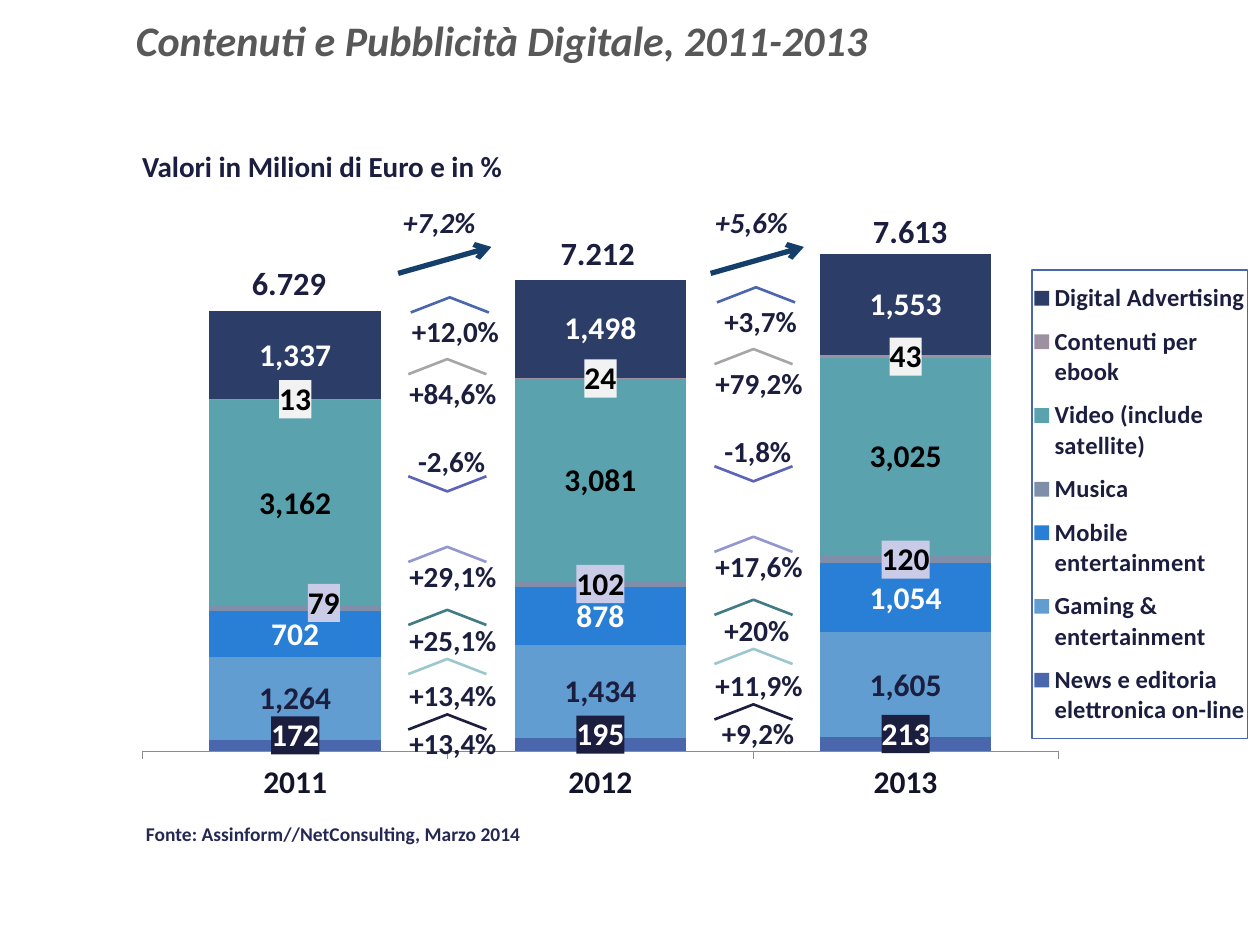
from copy import deepcopy
from typing import NamedTuple

from pptx import Presentation
from pptx.chart.data import CategoryChartData
from pptx.dml.color import RGBColor
from pptx.enum.chart import XL_CHART_TYPE as ChartType
from pptx.enum.chart import XL_LEGEND_POSITION as LegendPosition
from pptx.enum.chart import XL_TICK_MARK as TickMark
from pptx.enum.chart import XL_TICK_LABEL_POSITION as TickLabels
from pptx.enum.shapes import MSO_CONNECTOR as Connector
from pptx.enum.shapes import MSO_SHAPE as Shape
from pptx.enum.text import MSO_ANCHOR as Anchor
from pptx.enum.text import PP_ALIGN as Align
from pptx.oxml import parse_xml
from pptx.oxml.ns import nsdecls, qn
from pptx.oxml.xmlchemy import OxmlElement
from pptx.util import Inches, Pt

FONT = "Calibri"
NAVY = "1B1E3E"
ACCENT = "4A66AC"
SHIFT_X, SHIFT_Y = 2.43, -0.08


class Series(NamedTuple):
    name: str
    values: tuple
    color: str
    label_color: str
    label_fill: str = ""
    label_shifts: dict = {}


class Growth(NamedTuple):
    color: str
    tip: float
    label_top: float
    first: tuple
    second: tuple
    left: float = 3.24
    rise: float = 0.12


class Caption(NamedTuple):
    text: str
    left: float
    top: float
    width: float
    size: float = 16.6
    italic: bool = False


SERIES = [
    Series("News e editoria elettronica on-line", (172, 195, 213), ACCENT, "FFFFFF", NAVY,
           {index: (0, -0.017) for index in range(3)}),
    Series("Gaming & entertainment", (1264, 1434, 1605), "629DD1", NAVY),
    Series("Mobile entertainment", (702, 878, 1054), "297FD5", "FFFFFF"),
    Series("Musica", (79, 102, 120), "7F8FA9", "000000", "C9CBE7", {0: (0.024, -0.01)}),
    Series("Video (include satellite)", (3162, 3081, 3025), "5AA2AE", "000000"),
    Series("Contenuti per ebook", (13, 24, 43), "9D90A0", "000000", "F2F2F2"),
    Series("Digital Advertising", (1337, 1498, 1553), "2C3D67", "FFFFFF"),
]

GROWTHS = [
    Growth(ACCENT, 2.36, 2.44, ("+12,0%", 3.17, 1.02), ("+3,7%", 5.65, 0.89), left=3.26),
    Growth("A6A6A6", 2.85, 2.93, ("+84,6%", 3.15, 1.02), ("+79,2%", 5.58, 1.02)),
    Growth("5C64B7", 3.9, 3.47, ("-2,6%", 3.22, 0.81), ("-1,8%", 5.65, 0.81), rise=-0.12),
    Growth("9297CF", 4.34, 4.38, ("+29,1%", 3.15, 1.02), ("+17,6%", 5.58, 1.02)),
    Growth("417B85", 4.84, 4.89, ("+25,1%", 3.15, 1.02), ("+20%", 5.65, 0.83)),
    Growth("9CC7CE", 5.23, 5.33, ("+13,4%", 3.15, 1.02), ("+11,9%", 5.58, 1.02)),
    Growth(NAVY, 5.67, 5.71, ("+13,4%", 3.15, 1.02), ("+9,2%", 5.63, 0.89)),
]

CAPTIONS = [
    Caption("Valori in Milioni di Euro e in %", 1.03, 1.13, 3.22),
    Caption("6.729", 1.9, 2.04, 0.82, 18.5),
    Caption("7.212", 4.35, 1.8, 0.82, 18.5),
    Caption("7.613", 6.83, 1.63, 0.82, 18.5),
    Caption("+7,2%", 3.1, 1.57, 0.88, italic=True),
    Caption("+5,6%", 5.58, 1.57, 0.88, italic=True),
]


def rgb(value: str) -> RGBColor:
    return RGBColor.from_string(value)


def style_font(font, size: float, color: str, italic: bool = False) -> None:
    font.name, font.size, font.bold, font.italic = FONT, Pt(size), True, italic
    font.color.rgb = rgb(color)


def write(shape, text: str, size: float, color: str, italic: bool = False) -> None:
    frame = shape.text_frame
    frame.text = text
    frame.word_wrap = False
    para = frame.paragraphs[0]
    para.alignment = Align.LEFT
    style_font(para.runs[0].font, size, color, italic)


def add_caption(page, item: Caption) -> None:
    height = 0.41 if item.size > 18 else 0.38
    box = page.shapes.add_textbox(Inches(item.left), Inches(item.top), Inches(item.width), Inches(height))
    write(box, item.text, item.size, NAVY, item.italic)


def add_chevron(page, left: float, tip: float, rise: float, color: str) -> None:
    base = Inches(tip + rise)
    builder = page.shapes.build_freeform(Inches(left), base)
    builder.add_line_segments([(Inches(left + 0.31), Inches(tip)), (Inches(left + 0.62), base)], close=False)
    chevron = builder.convert_to_shape()
    chevron.shadow.inherit = False
    chevron.fill.background()
    chevron.line.color.rgb = rgb(color)
    chevron.line.width = Pt(1.5)


def add_growth(page, item: Growth) -> None:
    for column, (text, left, width) in enumerate((item.first, item.second)):
        drop = column * SHIFT_Y
        add_caption(page, Caption(text, left, item.label_top + drop, width))
        add_chevron(page, item.left + column * SHIFT_X, item.tip + drop, item.rise, item.color)


def add_trend_arrow(page, left: float) -> None:
    arrow = page.shapes.add_connector(
        Connector.STRAIGHT, Inches(left), Inches(2.17), Inches(left + 0.74), Inches(1.96))
    arrow.line.color.rgb = rgb("143F6A")
    arrow.line.width = Pt(3)
    tail = OxmlElement("a:tailEnd")
    tail.set("type", "arrow")
    arrow.line._get_or_add_ln().append(tail)
    arrow._element.spPr.append(OxmlElement("a:effectLst"))


def make_layout(**values):
    fields = "".join(f'<c:{name} val="{value}"/>' for name, value in values.items())
    return parse_xml(f'<c:layout {nsdecls("c")}><c:manualLayout>{fields}</c:manualLayout></c:layout>')


def make_label_fill(color: str):
    return parse_xml(f'<c:spPr {nsdecls("c", "a")}><a:solidFill><a:srgbClr val="{color}"/></a:solidFill></c:spPr>')


def drop_children(parent, tag: str) -> None:
    for child in parent.findall(qn(tag)):
        parent.remove(child)


def style_series(series, item: Series) -> None:
    series.format.fill.solid()
    series.format.fill.fore_color.rgb = rgb(item.color)
    labels = series.data_labels
    labels.show_value = True
    labels.number_format, labels.number_format_is_linked = "#,##0", False
    style_font(labels.font, 18, item.label_color)
    element = labels._element
    drop_children(element, "c:showLeaderLines")
    if item.label_fill:
        element.find(qn("c:txPr")).addprevious(make_label_fill(item.label_fill))
    shared = list(element)
    for position, (index, (x, y)) in enumerate(item.label_shifts.items()):
        label = OxmlElement("c:dLbl")
        number = OxmlElement("c:idx")
        number.set("val", str(index))
        label.extend([number, make_layout(x=x, y=y), *deepcopy(shared)])
        element.insert(position, label)


def style_legend(chart) -> None:
    chart.has_legend = True
    chart.legend.position = LegendPosition.RIGHT
    chart.legend.include_in_layout = False
    style_font(chart.legend.font, 14, NAVY)
    element = chart.legend._element
    drop_children(element, "c:layout")
    element.find(qn("c:legendPos")).addnext(
        make_layout(xMode="edge", yMode="edge", x=0.762, y=0.099, w=0.181, h=0.78))
    element.find(qn("c:txPr")).addprevious(parse_xml(
        f'<c:spPr {nsdecls("c", "a")}><a:ln w="9525"><a:solidFill>'
        f'<a:srgbClr val="{ACCENT}"/></a:solidFill></a:ln></c:spPr>'))


def add_revenue_chart(page) -> None:
    data = CategoryChartData(number_format="#,##0")
    data.categories = ["2011", "2012", "2013"]
    for item in SERIES:
        data.add_series(item.name, item.values)
    chart = page.shapes.add_chart(
        ChartType.COLUMN_STACKED, Inches(0.99), Inches(1.67), Inches(9.45), Inches(4.77), data).chart
    chart.has_title = False
    style_font(chart.font, 18, "000000")
    plot = chart.plots[0]
    plot.gap_width, plot.overlap, plot.vary_by_categories = 78, 100, False
    for series, item in zip(plot.series, SERIES):
        style_series(series, item)
    years, amounts = chart.category_axis, chart.value_axis
    years.major_tick_mark = TickMark.OUTSIDE
    years.tick_label_position = TickLabels.LOW
    style_font(years.tick_labels.font, 18, "121429")
    years.format.line.color.rgb = rgb("8C8C8C")
    years.format.line.width = Pt(0.5)
    amounts.minimum_scale, amounts.maximum_scale = 0, 8000
    amounts.has_major_gridlines = amounts.visible = False
    area = chart.element.find(".//" + qn("c:plotArea"))
    drop_children(area, "c:layout")
    area.insert(0, make_layout(layoutTarget="inner", xMode="edge", yMode="edge", x=0.015, y=0.03, w=0.769, h=0.87))
    style_legend(chart)


def main() -> None:
    """Build the digital content and advertising slide."""
    deck = Presentation()
    deck.slide_width, deck.slide_height = Inches(10), Inches(7.5)
    page = deck.slides.add_slide(deck.slide_layouts[6])
    title = page.shapes.add_textbox(Inches(0.98), Inches(0.11), Inches(9.8), Inches(0.46))
    write(title, "Contenuti e Pubblicità Digitale, 2011-2013", 24, "585858", True)
    title.text_frame.word_wrap = True
    title.text_frame.vertical_anchor = Anchor.MIDDLE
    title.text_frame.paragraphs[0].line_spacing = 0.9
    add_revenue_chart(page)
    for caption in CAPTIONS:
        add_caption(page, caption)
    for growth in GROWTHS:
        add_growth(page, growth)
    for left in (3.16, 5.64):
        add_trend_arrow(page, left)
    source = page.shapes.add_shape(Shape.RECTANGLE, Inches(1.06), Inches(6.47), Inches(3.19), Inches(0.29))
    source.shadow.inherit = False
    source.fill.solid()
    source.fill.fore_color.rgb = rgb("FFFFFF")
    source.line.fill.background()
    write(source, "Fonte: Assinform//NetConsulting, Marzo 2014", 11.1, "242852")
    deck.save("out.pptx")


if __name__ == "__main__":
    main()
